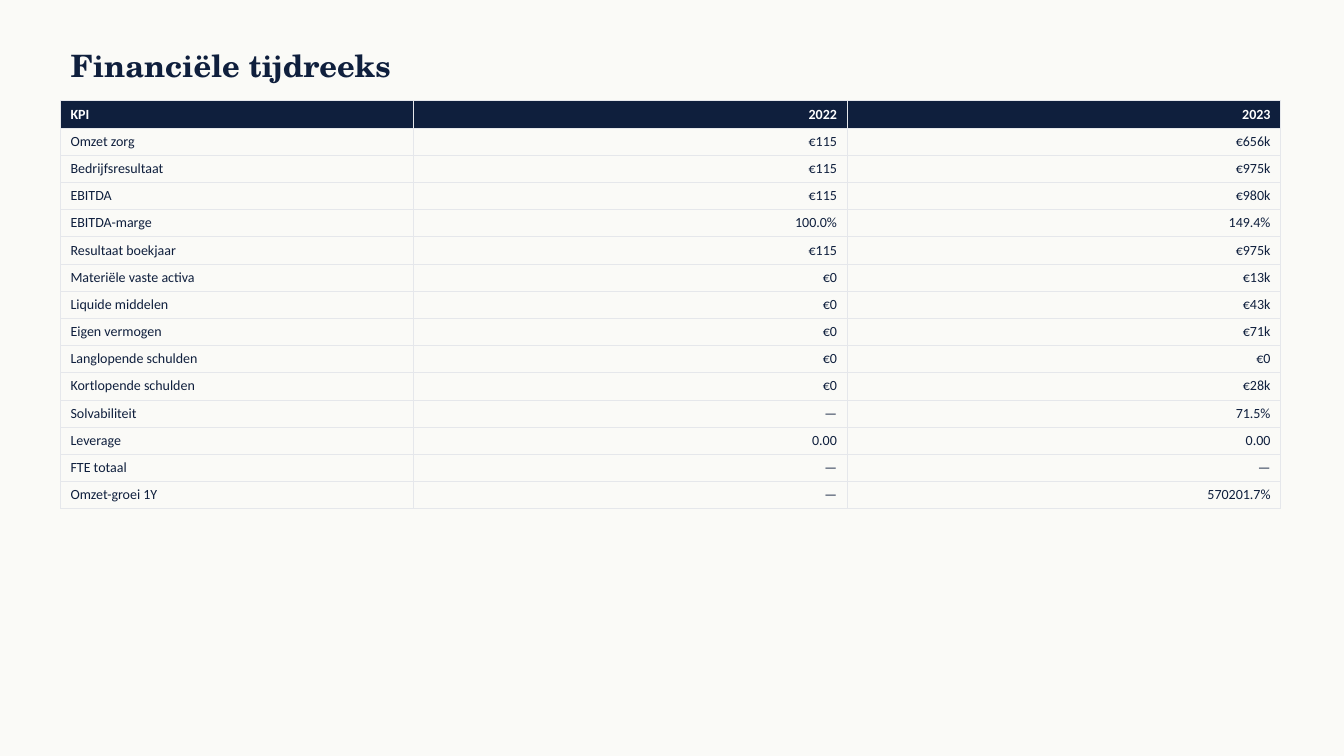
import pptx
import pptx.dml.color
import pptx.enum.text
import pptx.oxml
import pptx.oxml.ns
import pptx.util
from pptx.util import Inches

NAVY = pptx.dml.color.RGBColor(0x0F, 0x1F, 0x3D)
WHITE = pptx.dml.color.RGBColor(0xFF, 0xFF, 0xFF)
IVORY = pptx.dml.color.RGBColor(0xFA, 0xFA, 0xF7)
GRID_GREY = pptx.dml.color.RGBColor(0xE5, 0xE7, 0xEB)

TITLE_FONT = "TeX Gyre Schola"
TABLE_FONT = "Calibri"
LEFT = 0.6
COLUMN_WIDTHS = (3.5, 4.3, 4.3)
ROW_HEIGHT = 0.27

KPI_ROWS = [
    ("KPI", "2022", "2023"),
    ("Omzet zorg", "€115", "€656k"),
    ("Bedrijfsresultaat", "€115", "€975k"),
    ("EBITDA", "€115", "€980k"),
    ("EBITDA-marge", "100.0%", "149.4%"),
    ("Resultaat boekjaar", "€115", "€975k"),
    ("Materiële vaste activa", "€0", "€13k"),
    ("Liquide middelen", "€0", "€43k"),
    ("Eigen vermogen", "€0", "€71k"),
    ("Langlopende schulden", "€0", "€0"),
    ("Kortlopende schulden", "€0", "€28k"),
    ("Solvabiliteit", "—", "71.5%"),
    ("Leverage", "0.00", "0.00"),
    ("FTE totaal", "—", "—"),
    ("Omzet-groei 1Y", "—", "570201.7%"),
]


def format_paragraph(paragraph, face, size, color, bold, align):
    paragraph.alignment = align
    paragraph.font.name = face
    paragraph.font.size = pptx.util.Pt(size)
    paragraph.font.color.rgb = color
    paragraph.font.bold = bold


def set_title(slide, text):
    title = slide.shapes.title
    title.left, title.top = Inches(LEFT), Inches(0.4)
    title.width, title.height = Inches(12), Inches(0.5)
    frame = title.text_frame
    frame.text = text
    frame.auto_size = pptx.enum.text.MSO_AUTO_SIZE.NONE
    frame.vertical_anchor = pptx.enum.text.MSO_ANCHOR.MIDDLE
    format_paragraph(frame.paragraphs[0], TITLE_FONT, 22, NAVY, True,
                     pptx.enum.text.PP_ALIGN.LEFT)


def add_borders(cell):
    properties = cell._tc.get_or_add_tcPr()
    for side in ("lnL", "lnR", "lnT", "lnB"):
        properties.append(pptx.oxml.parse_xml(
            f'<a:{side} {pptx.oxml.ns.nsdecls("a")} w="{pptx.util.Pt(0.5)}">'
            f'<a:solidFill><a:srgbClr val="{GRID_GREY}"/></a:solidFill>'
            f'</a:{side}>'))


def fill_cell(cell, text, is_header, is_label):
    # Borders come before the fill in the cell properties
    add_borders(cell)
    if is_header:
        cell.fill.solid()
        cell.fill.fore_color.rgb = NAVY
    else:
        cell.fill.background()
    cell.text = text
    align = pptx.enum.text.PP_ALIGN
    format_paragraph(cell.text_frame.paragraphs[0], TABLE_FONT, 10,
                     WHITE if is_header else NAVY, is_header,
                     align.LEFT if is_label else align.RIGHT)


def add_kpi_table(slide, rows):
    kpi_table = slide.shapes.add_table(
        len(rows), len(COLUMN_WIDTHS), Inches(LEFT), Inches(1),
        Inches(sum(COLUMN_WIDTHS)), Inches(ROW_HEIGHT * len(rows))).table
    kpi_table.horz_banding = False
    for column, width in zip(kpi_table.columns, COLUMN_WIDTHS):
        column.width = Inches(width)
    for r, values in enumerate(rows):
        kpi_table.rows[r].height = Inches(ROW_HEIGHT)
        for c, value in enumerate(values):
            fill_cell(kpi_table.cell(r, c), value, r == 0, c == 0)


def main():
    deck = pptx.Presentation()
    deck.slide_width, deck.slide_height = Inches(13.33), Inches(7.5)
    slide = deck.slides.add_slide(deck.slide_layouts.get_by_name("Title Only"))
    slide.background.fill.solid()
    slide.background.fill.fore_color.rgb = IVORY

    # Heading and time series
    set_title(slide, "Financiële tijdreeks")
    add_kpi_table(slide, KPI_ROWS)
    deck.save("out.pptx")


if __name__ == "__main__":
    main()
